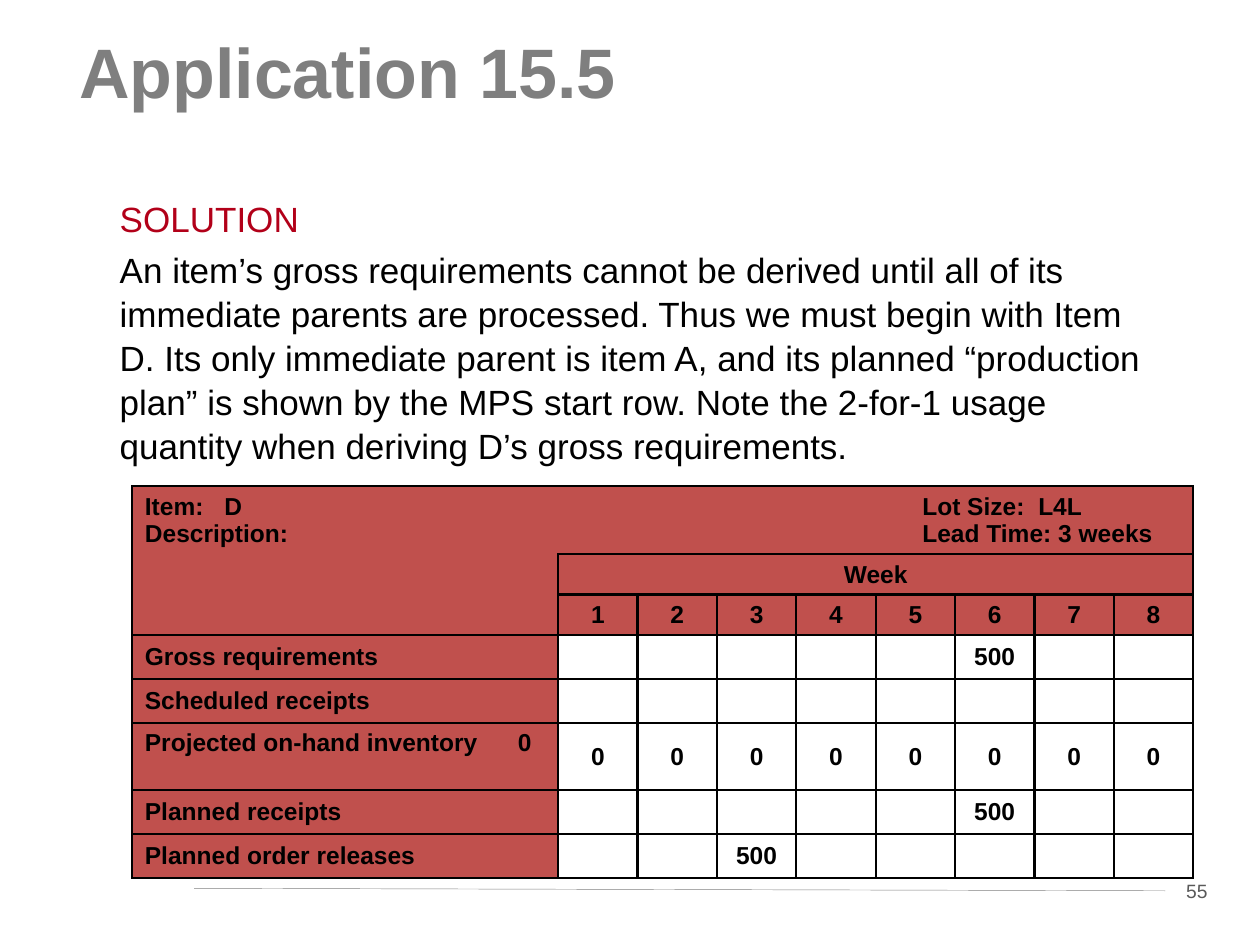
"""Build the Application 15.5 slide with the material requirements record of item D."""
from lxml import etree
from pptx import Presentation
from pptx.dml.color import RGBColor
from pptx.enum.shapes import MSO_CONNECTOR, MSO_SHAPE
from pptx.enum.text import MSO_ANCHOR, MSO_AUTO_SIZE, PP_ALIGN
from pptx.oxml.ns import qn
from pptx.util import Inches, Pt

CENTER, LEFT = PP_ALIGN.CENTER, PP_ALIGN.LEFT
TOP, MIDDLE = MSO_ANCHOR.TOP, MSO_ANCHOR.MIDDLE
NO_GRID_STYLE = "{2D5ABB26-0587-4C30-8999-92F81FD0307C}"

THEME = {
    "font": "Arial",
    "title": "7F7F7F", "heading": "B20019", "text": "000000", "number": "595959",
    "label_fill": "C0504D", "paper": "FFFFFF", "rule": "808080", "border": "000000",
    "title_size": 40, "body_size": 20, "table_size": 14, "number_size": 11,
    "border_width": 1.5, "rule_width": 0.25,
}

TITLE = "Application 15.5"
BODY = [
    ("SOLUTION", "heading"),
    ("An item’s gross requirements cannot be derived until all of its immediate parents "
     "are processed. Thus we must begin with Item D. Its only immediate parent is item A, "
     "and its planned “production plan” is shown by the MPS start row. Note the 2-for-1 "
     "usage quantity when deriving D’s gross requirements.", "text"),
]
SLIDE_NUMBER = "55"

ITEM_HEADER = "Item:\tD\tLot Size:\tL4L\nDescription:\tLead Time: 3 weeks"
ITEM_TABS = [(0.63, 6.17, 7.09), (6.17,)]
WEEKS = range(1, 9)
RECORD = [
    ("Gross requirements", {6: 500}),
    ("Scheduled receipts", {}),
    ("Projected on-hand inventory\t0", {week: 0 for week in WEEKS}),
    ("Planned receipts", {6: 500}),
    ("Planned order releases", {3: 500}),
]
INVENTORY_TABS = [(2.96,)]
INVENTORY_ROW = 5
HEADER_HEIGHTS = [0.54, 0.32, 0.32]
ROW_HEIGHT, INVENTORY_HEIGHT = 0.35, 0.53
LABEL_WIDTH, WEEK_WIDTH = 3.38, 0.63


def color(name):
    return RGBColor.from_string(THEME[name])


def style_runs(paragraph, size, color_name, bold=False):
    for run in paragraph.runs:
        run.font.name = THEME["font"]
        run.font.size = Pt(THEME[size])
        run.font.color.rgb = color(color_name)
        run.font.bold = bold


def place(shape, left, top, width, height):
    shape.left, shape.top = Inches(left), Inches(top)
    shape.width, shape.height = Inches(width), Inches(height)


def add_tabs(paragraph, positions):
    tab_list = etree.SubElement(paragraph._p.get_or_add_pPr(), qn("a:tabLst"))
    for position in positions:
        etree.SubElement(tab_list, qn("a:tab"), pos=str(Inches(position)), algn="l")


def add_borders(cell, sides):
    properties = cell._tc.get_or_add_tcPr()
    for side in sides:
        line = etree.SubElement(properties, qn(f"a:ln{side}"), w=str(Pt(THEME["border_width"])))
        fill = etree.SubElement(line, qn("a:solidFill"))
        etree.SubElement(fill, qn("a:srgbClr"), val=THEME["border"])


def write_cell(cell, text, alignment, tabs=()):
    cell.text_frame.text = text
    for paragraph in cell.text_frame.paragraphs:
        paragraph.alignment = alignment
        style_runs(paragraph, "table_size", "text", bold=True)
    for paragraph, positions in zip(cell.text_frame.paragraphs, tabs):
        add_tabs(paragraph, positions)


def add_footer(slide):
    rule = slide.shapes.add_connector(
        MSO_CONNECTOR.STRAIGHT, Inches(1.54), Inches(7.05), Inches(9.25), Inches(7.07))
    rule.line.color.rgb = color("rule")
    rule.line.width = Pt(THEME["rule_width"])
    etree.SubElement(rule._element.spPr, qn("a:effectLst"))
    box = slide.shapes.add_shape(
        MSO_SHAPE.RECTANGLE, Inches(9.25), Inches(6.93), Inches(0.5), Inches(0.29))
    box.shadow.inherit = False
    box.fill.solid()
    box.fill.fore_color.rgb = color("paper")
    box.line.fill.background()
    box.text_frame.text = SLIDE_NUMBER
    box.text_frame.vertical_anchor = TOP
    paragraph = box.text_frame.paragraphs[0]
    paragraph.alignment = CENTER
    style_runs(paragraph, "number_size", "number")


def fill_title(title):
    place(title, 0.53, 0.13, 8.94, 1.01)
    frame = title.text_frame
    frame.text = TITLE
    frame.vertical_anchor = TOP
    frame.margin_top = Inches(0.1)
    frame.paragraphs[0].alignment = LEFT
    style_runs(frame.paragraphs[0], "title_size", "title", bold=True)


def fill_body(body):
    place(body, 0.85, 1.5, 8.47, 2.27)
    frame = body.text_frame
    frame.auto_size = MSO_AUTO_SIZE.NONE
    frame.text = "\n".join(text for text, _ in BODY)
    for index, (paragraph, (_, color_name)) in enumerate(zip(frame.paragraphs, BODY)):
        properties = paragraph._p.get_or_add_pPr()
        properties.set("marL", "0")
        properties.set("indent", "0")
        etree.SubElement(properties, qn("a:buNone"))
        paragraph.line_spacing = 1.05
        paragraph.space_before = Pt(4 if index else 0)
        style_runs(paragraph, "body_size", color_name)


def add_record(slide):
    heights = HEADER_HEIGHTS + [ROW_HEIGHT] * len(RECORD)
    heights[INVENTORY_ROW] = INVENTORY_HEIGHT
    widths = [LABEL_WIDTH] + [WEEK_WIDTH] * len(WEEKS)
    frame = slide.shapes.add_table(
        len(heights), len(widths), Inches(1.05), Inches(3.86),
        Inches(sum(widths)), Inches(sum(heights)))
    table = frame.table
    table._tbl.tblPr.find(qn("a:tableStyleId")).text = NO_GRID_STYLE
    table.first_row = table.horz_banding = False
    for row, height in zip(table.rows, heights):
        row.height = Inches(height)
    for column, width in zip(table.columns, widths):
        column.width = Inches(width)

    open_edges = {(0, 0): "LRT", (1, 0): "LR", (2, 0): "LRB"}
    for row in range(len(heights)):
        for column in range(len(widths)):
            cell = table.cell(row, column)
            cell.vertical_anchor = MIDDLE
            cell.margin_top = cell.margin_bottom = 0
            sides = "LRT" if row == 0 else open_edges.get((row, column), "LRTB")
            add_borders(cell, sides)
            is_label = column == 0 or row < len(HEADER_HEIGHTS)
            cell.fill.solid()
            cell.fill.fore_color.rgb = color("label_fill" if is_label else "paper")

    table.cell(0, 0).merge(table.cell(0, len(WEEKS)))
    table.cell(1, 0).merge(table.cell(2, 0))
    table.cell(1, 1).merge(table.cell(1, len(WEEKS)))
    write_cell(table.cell(0, 0), ITEM_HEADER, LEFT, ITEM_TABS)
    write_cell(table.cell(1, 1), "Week", CENTER)
    for week in WEEKS:
        write_cell(table.cell(2, week), str(week), CENTER)
    for row, (label, quantities) in enumerate(RECORD, len(HEADER_HEIGHTS)):
        tabs = INVENTORY_TABS if row == INVENTORY_ROW else ()
        write_cell(table.cell(row, 0), label, LEFT, tabs)
        for week, quantity in quantities.items():
            write_cell(table.cell(row, week), str(quantity), CENTER)
    inventory_label = table.cell(INVENTORY_ROW, 0)
    inventory_label.vertical_anchor = TOP
    inventory_label.margin_top = Inches(0.05)


def main():
    presentation = Presentation()
    presentation.slide_width, presentation.slide_height = Inches(10), Inches(7.5)
    slide = presentation.slides.add_slide(presentation.slide_layouts[1])
    add_footer(slide)
    fill_title(slide.shapes.title)
    fill_body(slide.placeholders[1])
    add_record(slide)
    presentation.save("out.pptx")


if __name__ == "__main__":
    main()
